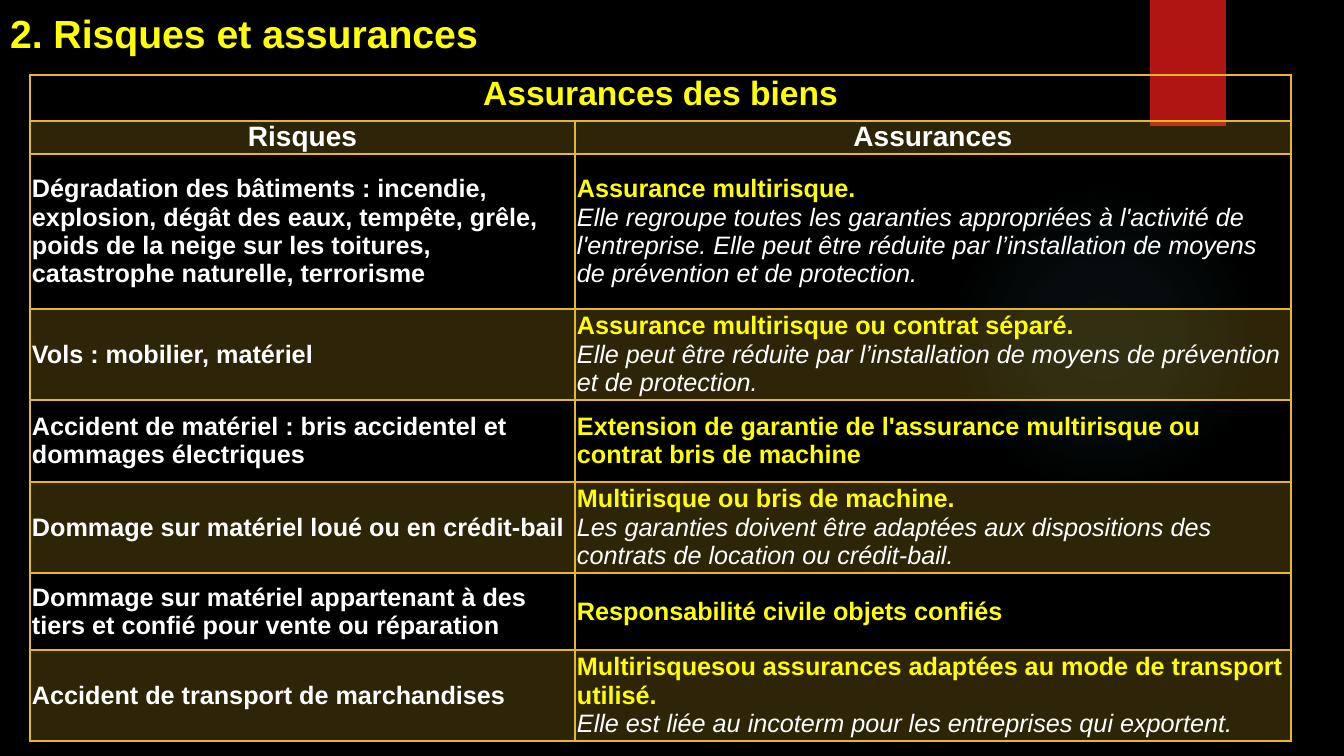
from dataclasses import dataclass

from lxml import etree
from pptx import Presentation
from pptx.dml.color import RGBColor
from pptx.enum.shapes import MSO_SHAPE
from pptx.enum.text import MSO_ANCHOR, MSO_AUTO_SIZE, PP_ALIGN
from pptx.oxml.ns import qn
from pptx.util import Pt

EMU_PER_PX = 914400 / 100.8
RECTANGLE = MSO_SHAPE.RECTANGLE
ELLIPSE = MSO_SHAPE.OVAL
TOP = MSO_ANCHOR.TOP
MIDDLE = MSO_ANCHOR.MIDDLE
LEFT = PP_ALIGN.LEFT
CENTER = PP_ALIGN.CENTER
NO_AUTOFIT = MSO_AUTO_SIZE.NONE


@dataclass(frozen=True)
class Theme:
    font: str = "Arial"
    background: str = "000000"
    text: str = "FFFFFF"
    highlight: str = "FFFF00"
    gold: str = "E6B729"
    ribbon: str = "B01513"
    glow: str = "50B9C1"
    title_size: int = 28
    heading_size: int = 24
    column_size: int = 20
    body_size: int = 18
    band_opacity: int = 20
    border: int = 1
    heading_border: int = 2


TITLE = "2. Risques et assurances"
HEADING = "Assurances des biens"
COLUMN_TITLES = ("Risques", "Assurances")
COLUMN_WIDTHS = (545, 716)
ROW_HEIGHTS = (46, 33, 155, 91, 82, 91, 77, 91)
COVERAGES = (
    ("Dégradation des bâtiments : incendie, explosion, dégât des eaux, tempête, grêle, "
     "poids de la neige sur les toitures, catastrophe naturelle, terrorisme",
     "Assurance multirisque.",
     "Elle regroupe toutes les garanties appropriées à l'activité de l'entreprise. "
     "Elle peut être réduite par l’installation de moyens de prévention et de protection."),
    ("Vols : mobilier, matériel",
     "Assurance multirisque ou contrat séparé.",
     "Elle peut être réduite par l’installation de moyens de prévention et de protection."),
    ("Accident de matériel : bris accidentel et dommages électriques",
     "Extension de garantie de l'assurance multirisque ou contrat bris de machine", ""),
    ("Dommage sur matériel loué ou en crédit-bail",
     "Multirisque ou bris de machine.",
     "Les garanties doivent être adaptées aux dispositions des contrats de location "
     "ou crédit-bail."),
    ("Dommage sur matériel appartenant à des tiers et confié pour vente ou réparation",
     "Responsabilité civile objets confiés", ""),
    ("Accident de transport de marchandises",
     "Multirisquesou assurances adaptées au mode de transport utilisé.",
     "Elle est liée au incoterm pour les entreprises qui exportent."),
)


def px(length):
    return round(length * EMU_PER_PX)


def add_color(parent, color, opacity=100):
    element = etree.SubElement(parent, qn("a:srgbClr"), val=color)
    if opacity < 100:
        etree.SubElement(element, qn("a:alpha"), val=str(opacity * 1000))


def write_text(paragraph, text, *, font, size, color, bold=True, italic=False,
               align=LEFT, space_after=0):
    paragraph.alignment = align
    paragraph.space_before = Pt(0)
    paragraph.space_after = Pt(space_after)
    paragraph.line_spacing = 1.0
    run = paragraph.add_run()
    run.text = text
    run.font.name = font
    run.font.size = Pt(size)
    run.font.bold = bold
    run.font.italic = italic
    run.font.color.rgb = RGBColor.from_string(color)


class SlideBuilder:
    def __init__(self, presentation, theme):
        self.theme = theme
        self.slide = presentation.slides.add_slide(presentation.slide_layouts[5])
        fill = self.slide.background.fill
        fill.solid()
        fill.fore_color.rgb = RGBColor.from_string(theme.background)

    def title(self, text, left, top, width, height):
        shape = self.slide.shapes.title
        shape.left, shape.top, shape.width, shape.height = map(px, (left, top, width, height))
        frame = shape.text_frame
        frame.word_wrap = True
        frame.auto_size = NO_AUTOFIT
        frame.vertical_anchor = TOP
        frame.margin_left = frame.margin_right = px(10)
        frame.margin_top, frame.margin_bottom = px(9), 0
        write_text(frame.paragraphs[0], text, font=self.theme.font,
                   size=self.theme.title_size, color=self.theme.highlight)

    def shape(self, kind, left, top, width, height, color):
        shape = self.slide.shapes.add_shape(kind, *map(px, (left, top, width, height)))
        shape.shadow.inherit = False
        shape.line.fill.background()
        shape.fill.solid()
        shape.fill.fore_color.rgb = RGBColor.from_string(color)
        return shape

    def glow(self, left, top, diameter):
        shape = self.shape(ELLIPSE, left, top, diameter, diameter, self.theme.glow)
        properties = shape.element.spPr
        gradient = etree.Element(qn("a:gradFill"), rotWithShape="1")
        stops = etree.SubElement(gradient, qn("a:gsLst"))
        for position, opacity in ((0, 7), (36, 6), (69, 0)):
            stop = etree.SubElement(stops, qn("a:gs"), pos=str(position * 1000))
            add_color(stop, self.theme.glow, opacity)
        path = etree.SubElement(gradient, qn("a:path"), path="circle")
        etree.SubElement(path, qn("a:fillToRect"), l="50000", t="50000", r="50000", b="50000")
        properties.replace(properties.find(qn("a:solidFill")), gradient)

    def table(self, left, top, column_widths, row_heights):
        frame = self.slide.shapes.add_table(
            len(row_heights), len(column_widths), px(left), px(top),
            px(sum(column_widths)), px(sum(row_heights)))
        table = frame.table
        table.first_row = table.horz_banding = False
        for column, width in zip(table.columns, column_widths):
            column.width = px(width)
        for row, height in zip(table.rows, row_heights):
            row.height = px(height)
        return table

    def cell(self, cell, lines, *, banded=False, anchor=MIDDLE,
             top_border=None, bottom_border=None):
        cell.margin_left = cell.margin_right = px(2)
        cell.margin_top = cell.margin_bottom = 0
        cell.vertical_anchor = anchor
        properties = cell._tc.get_or_add_tcPr()
        thin = self.theme.border
        borders = {"lnL": thin, "lnR": thin, "lnT": top_border or thin,
                   "lnB": bottom_border or thin}
        for side, width in borders.items():
            line = etree.SubElement(properties, qn(f"a:{side}"), w=str(Pt(width)))
            add_color(etree.SubElement(line, qn("a:solidFill")), self.theme.gold)
        if banded:
            fill = etree.SubElement(properties, qn("a:solidFill"))
            add_color(fill, self.theme.gold, self.theme.band_opacity)
        else:
            cell.fill.background()
        for index, (text, style) in enumerate(lines):
            frame = cell.text_frame
            paragraph = frame.add_paragraph() if index else frame.paragraphs[0]
            write_text(paragraph, text, font=self.theme.font, **style)


def main():
    theme = Theme()
    presentation = Presentation()
    presentation.slide_width, presentation.slide_height = px(1344), px(756)
    builder = SlideBuilder(presentation, theme)
    builder.glow(949, 184, 310)
    builder.shape(RECTANGLE, 1150, 0, 76, 126, theme.ribbon)
    builder.title(TITLE, 0, 0, 644, 57)

    table = builder.table(30, 75, COLUMN_WIDTHS, ROW_HEIGHTS)
    heading = dict(size=theme.heading_size, color=theme.highlight, align=CENTER, space_after=3)
    column_title = dict(size=theme.column_size, color=theme.text, align=CENTER)
    risk_style = dict(size=theme.body_size, color=theme.text)
    cover_style = dict(size=theme.body_size, color=theme.highlight)
    detail_style = dict(size=theme.body_size, color=theme.text, bold=False, italic=True)

    table.cell(0, 0).merge(table.cell(0, 1))
    for column, text in enumerate(COLUMN_TITLES):
        builder.cell(table.cell(0, column), [] if column else [(HEADING, heading)],
                     anchor=TOP, bottom_border=theme.heading_border)
        builder.cell(table.cell(1, column), [(text, column_title)], banded=True,
                     anchor=TOP, top_border=theme.heading_border)
    for row, (risk, cover, detail) in enumerate(COVERAGES, start=2):
        banded = row % 2 == 1
        lines = [(cover, cover_style)] + ([(detail, detail_style)] if detail else [])
        builder.cell(table.cell(row, 0), [(risk, risk_style)], banded=banded)
        builder.cell(table.cell(row, 1), lines, banded=banded)

    presentation.save("out.pptx")


if __name__ == "__main__":
    main()
